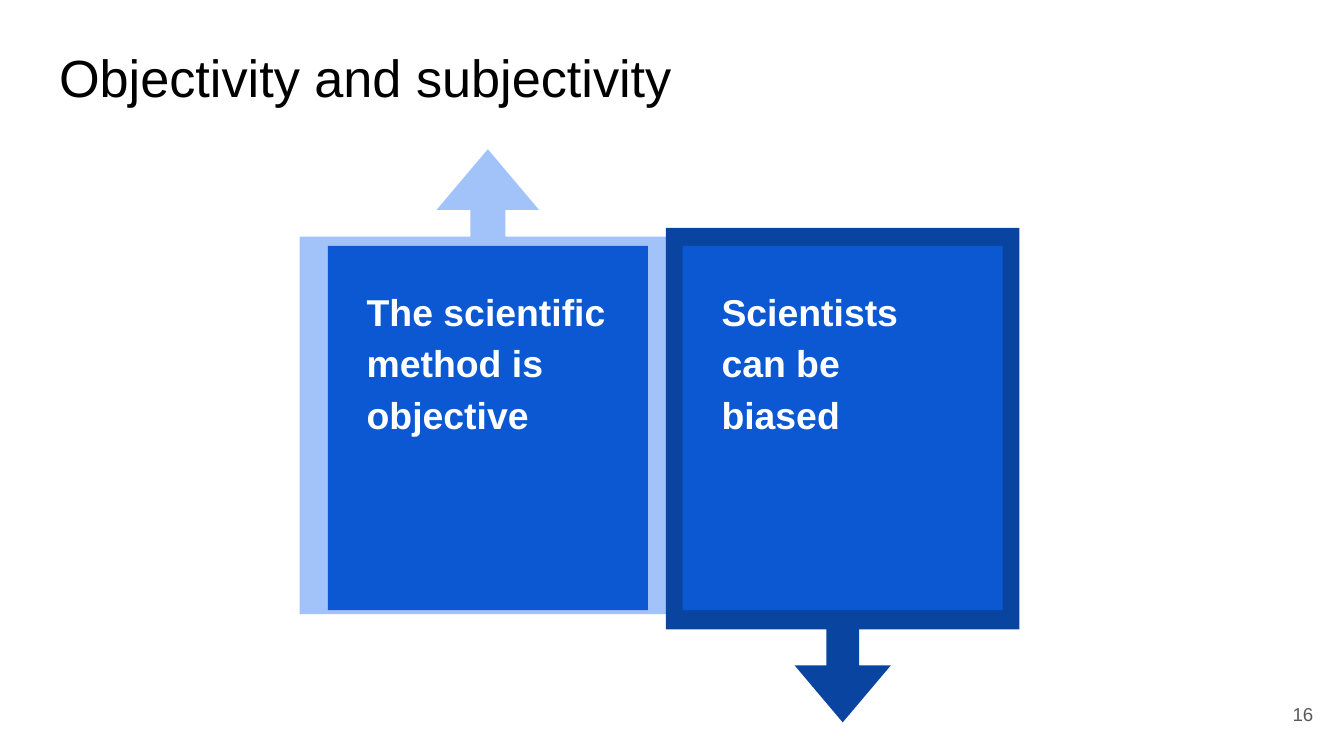
import pptx
import pptx.util
import pptx.dml.color
import pptx.enum.shapes
import pptx.enum.text

Inches = pptx.util.Inches
RGBColor = pptx.dml.color.RGBColor
MSO_SHAPE = pptx.enum.shapes.MSO_SHAPE
MSO_ANCHOR = pptx.enum.text.MSO_ANCHOR
PP_ALIGN = pptx.enum.text.PP_ALIGN

BLACK = RGBColor(0x00, 0x00, 0x00)
WHITE = RGBColor(0xFF, 0xFF, 0xFF)
GREY = RGBColor(0x59, 0x59, 0x59)
LIGHT_BLUE = RGBColor(0xA1, 0xC3, 0xFA)
BLUE = RGBColor(0x0C, 0x58, 0xD3)
DARK_BLUE = RGBColor(0x09, 0x44, 0xA1)

# Shaft width, head half-width, head length and body share of a callout
CALLOUT_PROPORTIONS = (0.093, 0.136, 0.161, 0.812)
PANEL_TOP, PANEL_WIDTH, PANEL_HEIGHT = 1.83, 2.38, 2.71


def write_text(holder, text, size, color, bold=False, align=PP_ALIGN.LEFT,
               anchor=MSO_ANCHOR.TOP, line_spacing=1.0):
    frame = holder.text_frame
    frame.word_wrap = True
    frame.auto_size = pptx.enum.text.MSO_AUTO_SIZE.NONE
    frame.vertical_anchor = anchor
    frame.margin_left = frame.margin_right = Inches(0.1)
    frame.margin_top = frame.margin_bottom = Inches(0.1)
    frame.text = text
    paragraph = frame.paragraphs[0]
    paragraph.alignment = align
    paragraph.line_spacing = line_spacing
    font = paragraph.runs[0].font
    font.name, font.size, font.bold = "Arial", pptx.util.Pt(size), bold
    font.color.rgb = color


def add_filled(shapes, preset, left, top, width, height, color):
    filled = shapes.add_shape(preset, Inches(left), Inches(top),
                              Inches(width), Inches(height))
    filled.shadow.inherit = False
    filled.fill.solid()
    filled.fill.fore_color.rgb = color
    filled.line.fill.background()
    return filled


def add_statement(slide, text, panel_left, callout_box, rotation, callout_color):
    """Group an arrow callout, the panel over it and the statement."""
    shapes = slide.shapes.add_group_shape().shapes

    callout = add_filled(shapes, MSO_SHAPE.RIGHT_ARROW_CALLOUT,
                         *callout_box, callout_color)
    for index, proportion in enumerate(CALLOUT_PROPORTIONS):
        callout.adjustments[index] = proportion
    callout.rotation = rotation

    add_filled(shapes, MSO_SHAPE.RECTANGLE, panel_left, PANEL_TOP,
               PANEL_WIDTH, PANEL_HEIGHT, BLUE)
    statement = shapes.add_textbox(Inches(panel_left + 0.19), Inches(2),
                                   Inches(1.99), Inches(2.26))
    write_text(statement, text, 20, WHITE, bold=True, line_spacing=1.15)


def add_title(slide, text):
    title = slide.shapes.title
    title.left, title.top = Inches(0.34), Inches(0.24)
    title.width, title.height = Inches(9.32), Inches(0.63)
    write_text(title, text, 28, BLACK)


def add_page_number(slide, number):
    page_number = slide.shapes.add_textbox(Inches(9.27), Inches(5.1),
                                           Inches(0.6), Inches(0.43))
    write_text(page_number, number, 10, GREY, align=PP_ALIGN.RIGHT,
               anchor=MSO_ANCHOR.MIDDLE)


def main():
    deck = pptx.Presentation()
    # Widescreen, 16:9
    deck.slide_width = Inches(10)
    deck.slide_height = deck.slide_width * 9 // 16
    slide = deck.slides.add_slide(deck.slide_layouts[5])

    add_title(slide, "Objectivity and subjectivity")

    # Objective statement points up, biased statement points down
    add_statement(slide, "The scientific method is objective", 2.44,
                  (1.9, 1.44, 3.46, 2.8), 270, LIGHT_BLUE)
    add_statement(slide, "Scientists can be biased", 5.08,
                  (4.43, 2.22, 3.68, 2.63), 90, DARK_BLUE)

    add_page_number(slide, "16")
    deck.save("out.pptx")


if __name__ == "__main__":
    main()
